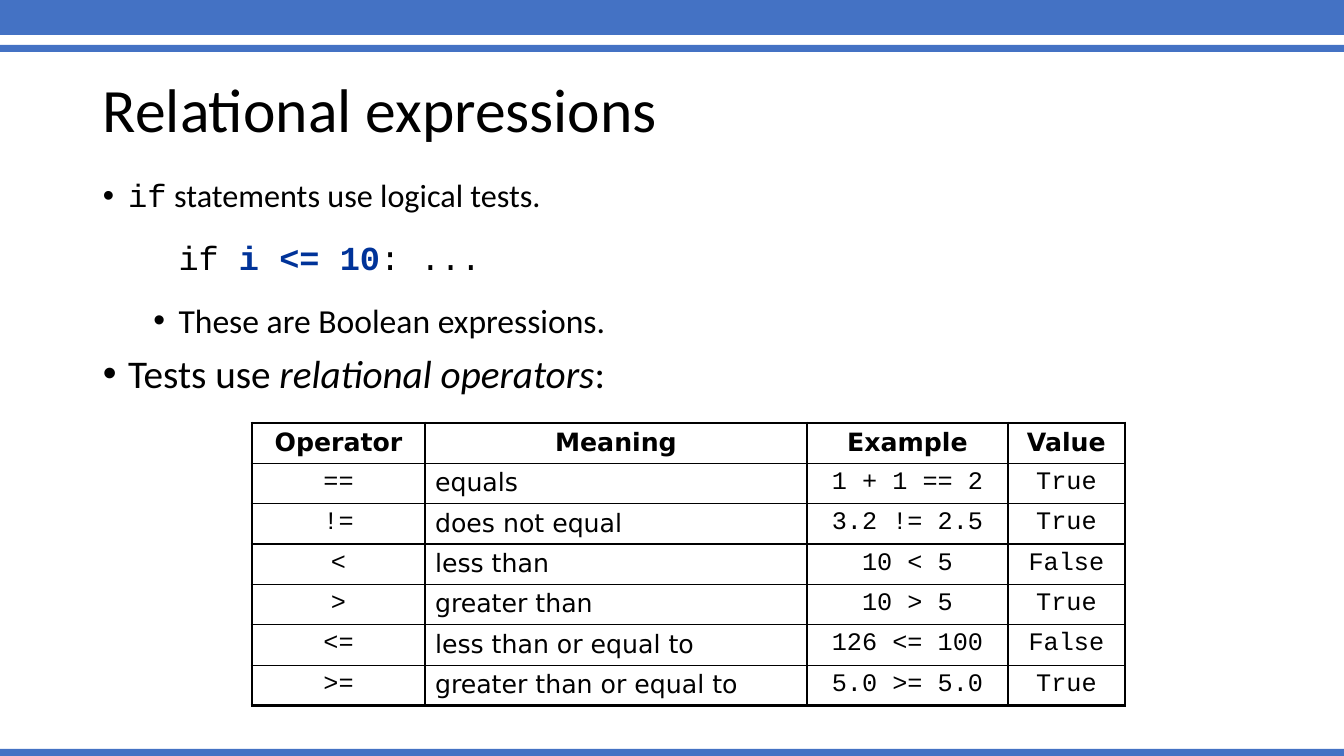
from lxml import etree
from pptx import Presentation
from pptx.dml.color import RGBColor
from pptx.enum.shapes import MSO_SHAPE
from pptx.enum.text import MSO_ANCHOR, PP_ALIGN
from pptx.oxml.ns import qn
from pptx.util import Pt

RECTANGLE = MSO_SHAPE.RECTANGLE
TOP, MIDDLE = MSO_ANCHOR.TOP, MSO_ANCHOR.MIDDLE
LEFT, CENTER = PP_ALIGN.LEFT, PP_ALIGN.CENTER

EMU_PER_PX = 12192000 / 1344
COLORS = {"bar": "4472C4", "text": "000000", "test": "003399"}
BODY, CODE, TABLE = "Calibri", "Courier New", "DejaVu Sans"
THIN, THICK = 1, 2.25

BARS = [(-3, 38), (45, 7), (749, 7)]
BULLETS = [
    {"level": 0, "before": 0, "bullet": True,
     "runs": [("if", {"size": 23, "font": CODE}),
              (" statements use logical tests.", {"size": 23})]},
    {"level": 1, "before": 19, "bullet": False,
     "runs": [("if ", {"size": 24, "font": CODE}),
              ("i <= 10", {"size": 24, "font": CODE, "color": "test", "bold": True}),
              (": ...", {"size": 24, "font": CODE})]},
    {"level": 1, "before": 19, "bullet": True,
     "runs": [("These are Boolean expressions.", {"size": 24})]},
    {"level": 0, "before": 10, "bullet": True,
     "runs": [("Tests use ", {"size": 28}),
              ("relational operators", {"size": 28, "italic": True}),
              (":", {"size": 28})]},
]
OPERATORS = [
    ("Operator", "Meaning", "Example", "Value"),
    ("==", "equals", "1 + 1 == 2", "True"),
    ("!=", "does not equal", "3.2 != 2.5", "True"),
    ("<", "less than", "10 < 5", "False"),
    (">", "greater than", "10 > 5", "True"),
    ("<=", "less than or equal to", "126 <= 100", "False"),
    (">=", "greater than or equal to", "5.0 >= 5.0", "True"),
]
COLUMN_WIDTHS = [173, 382, 201, 117]
MEANING_COLUMN = 1


def px(length):
    return round(length * EMU_PER_PX)


class SlideBuilder:
    def __init__(self, presentation):
        self.slide = presentation.slides.add_slide(presentation.slide_layouts[6])

    def style_run(self, run, size, font=BODY, color="text", bold=False, italic=False):
        run.font.size = Pt(size)
        run.font.name = font
        run.font.bold = bold
        run.font.italic = italic
        run.font.color.rgb = RGBColor.from_string(COLORS[color])

    def bar(self, top, height):
        shape = self.slide.shapes.add_shape(RECTANGLE, 0, px(top), px(1344), px(height))
        shape.shadow.inherit = False
        shape.fill.solid()
        shape.fill.fore_color.rgb = RGBColor.from_string(COLORS["bar"])
        shape.line.fill.background()

    def text_box(self, left, top, width, height, anchor):
        shape = self.slide.shapes.add_textbox(px(left), px(top), px(width), px(height))
        text_frame = shape.text_frame
        text_frame.word_wrap = True
        text_frame.vertical_anchor = anchor
        return text_frame

    def title(self, text, left, top, width, height):
        text_frame = self.text_box(left, top, width, height, MIDDLE)
        text_frame.text = text
        paragraph = text_frame.paragraphs[0]
        paragraph.line_spacing = 0.9
        self.style_run(paragraph.runs[0], 44)

    def bullet_list(self, items, left, top, width, height):
        text_frame = self.text_box(left, top, width, height, TOP)
        for index, item in enumerate(items):
            paragraph = text_frame.add_paragraph() if index else text_frame.paragraphs[0]
            paragraph.level = item["level"]
            paragraph.line_spacing = 0.9
            paragraph.space_before = Pt(item["before"])
            for text, style in item["runs"]:
                run = paragraph.add_run()
                run.text = text
                self.style_run(run, **style)
            self.indent(paragraph, item["level"], item["bullet"])

    def indent(self, paragraph, level, bullet):
        hanging = Pt(18)
        properties = paragraph._p.get_or_add_pPr()
        properties.set("marL", str(hanging * (1 + 2 * level)))
        properties.set("indent", str(-hanging if bullet else 0))
        if bullet:
            etree.SubElement(properties, qn("a:buFont"), typeface="Arial")
            etree.SubElement(properties, qn("a:buChar"), char="•")
        else:
            etree.SubElement(properties, qn("a:buNone"))

    def table(self, rows, column_widths, left, top, height):
        last_row, last_column = len(rows) - 1, len(column_widths) - 1
        frame = self.slide.shapes.add_table(
            len(rows), len(column_widths),
            px(left), px(top), px(sum(column_widths)), px(height))
        table = frame.table
        table.first_row = False
        table.horz_banding = False
        for column, width in zip(table.columns, column_widths):
            column.width = px(width)
        for row, texts in enumerate(rows):
            for column, text in enumerate(texts):
                header, meaning = row == 0, column == MEANING_COLUMN
                cell = table.cell(row, column)
                cell.text_frame.text = text
                paragraph = cell.text_frame.paragraphs[0]
                paragraph.alignment = LEFT if meaning and not header else CENTER
                font = TABLE if header or meaning else CODE
                self.style_run(paragraph.runs[0], 18, font, bold=header)
                outer_sides = {"L": column == 0, "R": column == last_column,
                               "T": row == 0, "B": row == last_row}
                self.borders(cell, outer_sides)
                cell.fill.background()

    def borders(self, cell, outer_sides):
        properties = cell._tc.get_or_add_tcPr()
        for side, outer in outer_sides.items():
            width = Pt(THICK if outer else THIN)
            line = etree.SubElement(properties, qn(f"a:ln{side}"), w=str(width))
            fill = etree.SubElement(line, qn("a:solidFill"))
            etree.SubElement(fill, qn("a:srgbClr"), val=COLORS["text"])


def main():
    presentation = Presentation()
    presentation.slide_width = px(1344)
    presentation.slide_height = px(756)
    builder = SlideBuilder(presentation)
    for top, height in BARS:
        builder.bar(top, height)
    builder.title("Relational expressions", 93, 40, 1159, 146)
    builder.bullet_list(BULLETS, 93, 175, 1159, 480)
    builder.table(OPERATORS, COLUMN_WIDTHS, 252, 423, 282)
    presentation.save("out.pptx")


if __name__ == "__main__":
    main()
